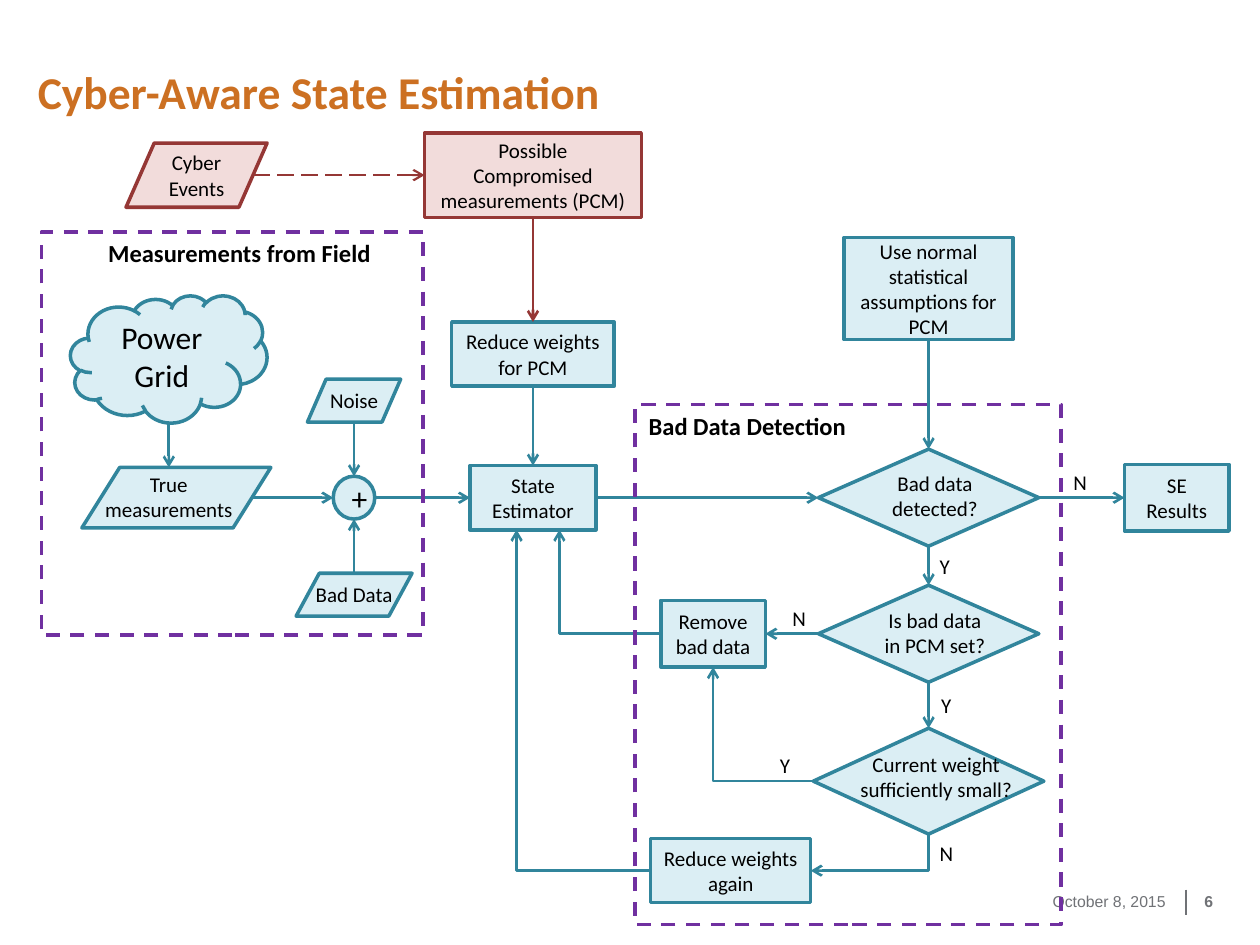
"""Build the Cyber-Aware State Estimation flowchart slide."""
import pptx
import pptx.util
import pptx.dml.color
import pptx.enum.dml
import pptx.enum.shapes
import pptx.enum.text
import pptx.oxml
import pptx.oxml.ns

SHAPE = pptx.enum.shapes.MSO_SHAPE
CONNECTOR = pptx.enum.shapes.MSO_CONNECTOR
DASH = pptx.enum.dml.MSO_LINE
ALIGN = pptx.enum.text.PP_ALIGN
ANCHOR = pptx.enum.text.MSO_ANCHOR
BOX, DIAMOND, DATA = SHAPE.RECTANGLE, SHAPE.FLOWCHART_DECISION, SHAPE.FLOWCHART_DATA
TOP, LEFT, BOTTOM, RIGHT = range(4)

TEAL, RED = ("DBEEF4", "31859C"), ("F2DCDB", "953735")
PURPLE, ORANGE, GREY, BLACK = "7030A0", "CC7022", "707276", "000000"

COLUMNS = {"cyber": 1.56, "grid": 1.34, "true": 1.4, "sum": 2.81, "estimate": 4.23,
           "remove": 5.66, "again": 5.8, "decide": 7.37, "result": 9.34}
ROWS = {"cyber": 1.39, "normal": 2.29, "reduce": 2.81, "grid": 2.85, "noise": 3.18,
        "main": 3.95, "bad": 4.72, "member": 5.03, "weight": 6.2, "again": 6.91}

# name: kind, text, column, row, width, height, palette
NODES = {
    "estimator": (BOX, "State Estimator", "estimate", "main", 1, 0.51, TEAL),
    "reduce": (BOX, "Reduce weights for PCM", "estimate", "reduce", 1.29, 0.51, TEAL),
    "compromised": (BOX, "Possible Compromised measurements (PCM)",
                    "estimate", "cyber", 1.72, 0.67, RED),
    "events": (DATA, "Cyber Events", "cyber", "cyber", 1.12, 0.51, RED),
    "remove": (BOX, "Remove bad data", "remove", "member", 0.83, 0.53, TEAL),
    "again": (BOX, "Reduce weights again", "again", "again", 1.27, 0.51, TEAL),
    "normal": (BOX, "Use normal statistical assumptions for PCM",
               "decide", "normal", 1.34, 0.81, TEAL),
    "member": (DIAMOND, "Is bad data\nin PCM set?", "decide", "member", 1.75, 0.77, TEAL),
    "weight": (DIAMOND, "Current weight\nsufficiently small?",
               "decide", "weight", 1.83, 0.84, TEAL),
    "sum": (SHAPE.FLOWCHART_CONNECTOR, "+", "sum", "main", 0.33, 0.34, TEAL),
    "grid": (SHAPE.CLOUD, "Power Grid", "grid", "grid", 1.56, 1.01, TEAL),
    "true": (DATA, "True\nmeasurements", "true", "main", 1.5, 0.48, TEAL),
    "detected": (DIAMOND, "Bad data\ndetected?", "decide", "main", 1.75, 0.77, TEAL),
    "bad": (DATA, "Bad Data", "sum", "bad", 0.92, 0.34, TEAL),
    "noise": (DATA, "Noise", "sum", "noise", 0.74, 0.34, TEAL),
    "results": (BOX, "SE Results", "result", "main", 0.83, 0.53, TEAL),
}
# name: caption width, height, shift right, shift down
CAPTIONS = {"member": (1.01, 0.5, 0.05, -0.01), "weight": (1.42, 0.51, 0.06, -0.03),
            "detected": (0.89, 0.51, 0.05, -0.01), "true": (1.22, 0.51, -0.06, 0),
            "bad": (0.82, 0.31, 0, 0), "noise": (0.59, 0.31, 0, 0)}
LARGE = {"sum", "grid"}

FLOWS = [
    ("events", RIGHT, "compromised", LEFT), ("compromised", BOTTOM, "reduce", TOP),
    ("reduce", BOTTOM, "estimator", TOP), ("sum", RIGHT, "estimator", LEFT),
    ("normal", BOTTOM, "detected", TOP), ("detected", BOTTOM, "member", TOP),
    ("member", BOTTOM, "weight", TOP), ("member", LEFT, "remove", RIGHT),
    ("estimator", RIGHT, "detected", LEFT), ("bad", TOP, "sum", BOTTOM),
    ("noise", BOTTOM, "sum", TOP), ("detected", RIGHT, "results", LEFT),
    ("grid", BOTTOM, "true", TOP), ("true", RIGHT, "sum", LEFT),
]
# from, side, to, side, shift of the end along that side, arrowhead
BENDS = [
    ("again", RIGHT, "weight", BOTTOM, 0, "headEnd"),
    ("weight", LEFT, "remove", BOTTOM, 0, "tailEnd"),
    ("remove", LEFT, "estimator", BOTTOM, 0.21, "tailEnd"),
    ("again", LEFT, "estimator", BOTTOM, -0.13, "tailEnd"),
]
FRAMES = [("Measurements from Field", (0.33, 1.84, 3.03, 3.2), (0.76, 1.84, 2.3, 0.34)),
          ("Bad Data Detection", (5.04, 3.21, 3.38, 4.13), (5.05, 3.21, 1.78, 0.34))]
ANSWERS = [("Y", 7.37, 5.45), ("N", 7.36, 6.62), ("Y", 6.09, 5.92),
           ("N", 6.19, 4.76), ("Y", 7.36, 4.34), ("N", 8.42, 3.68)]


def inches(*lengths):
    return [pptx.util.Inches(length) for length in lengths]


def color(value):
    return pptx.dml.color.RGBColor.from_string(value)


def write(owner, text, size=12, font="Calibri", ink=BLACK, bold=False,
          align=ALIGN.LEFT, anchor=ANCHOR.TOP, wrap=True, margins=None):
    frame = owner.text_frame
    frame.text, frame.word_wrap, frame.vertical_anchor = text, wrap, anchor
    if margins:
        (frame.margin_left, frame.margin_top,
         frame.margin_right, frame.margin_bottom) = inches(*margins)
    for paragraph in frame.paragraphs:
        paragraph.alignment = align
        paragraph.font.name, paragraph.font.bold = font, bold
        paragraph.font.size = pptx.util.Pt(size)
        paragraph.font.color.rgb = color(ink)


def outline(item, ink, width, dash=None):
    item.line.color.rgb = color(ink)
    item.line.width = pptx.util.Pt(width)
    if dash:
        item.line.dash_style = dash


def draw_node(slide, name):
    kind, text, column, row, width, height, (fill, ink) = NODES[name]
    x, y = COLUMNS[column], ROWS[row]
    caption = CAPTIONS.get(name)
    parent = slide.shapes.add_group_shape().shapes if caption else slide.shapes
    node = parent.add_shape(kind, *inches(x - width / 2, y - height / 2, width, height))
    node.shadow.inherit = False
    node.fill.solid()
    node.fill.fore_color.rgb = color(fill)
    outline(node, ink, 2)
    if caption:
        wide, high, right, down = caption
        label = parent.add_textbox(
            *inches(x + right - wide / 2, y + down - high / 2, wide, high))
        write(label, text, align=ALIGN.CENTER, wrap=False)
    else:
        write(node, text, 18 if name in LARGE else 12,
              align=ALIGN.CENTER, anchor=ANCHOR.MIDDLE)
    return node


def port(name, side):
    kind, _, column, row, width, height, _ = NODES[name]
    reach = width * (0.4 if kind == DATA else 0.5)
    across = {LEFT: -reach, RIGHT: reach}.get(side, 0)
    down = {TOP: -height / 2, BOTTOM: height / 2}.get(side, 0)
    return COLUMNS[column] + across, ROWS[row] + down


def draw_line(slide, kind, start, end, ink, width, arrow=None, dash=None):
    line = slide.shapes.add_connector(kind, *inches(*start, *end))
    outline(line, ink, width, dash)
    if arrow:
        head = pptx.oxml.parse_xml(
            f'<a:{arrow} {pptx.oxml.ns.nsdecls("a")} type="arrow"/>')
        line.line._get_or_add_ln().append(head)
    line._element.spPr.append(
        pptx.oxml.parse_xml(f'<a:effectLst {pptx.oxml.ns.nsdecls("a")}/>'))
    return line


def join(line, nodes, source, out, target, into, shift=0):
    if NODES[source][0] in (BOX, DIAMOND):
        line.begin_connect(nodes[source], out)
    if NODES[target][0] in (BOX, DIAMOND) and not shift:
        line.end_connect(nodes[target], into)


def main():
    deck = pptx.Presentation()
    deck.slide_width, deck.slide_height = inches(10, 7.5)
    slide = deck.slides.add_slide(deck.slide_layouts[5])
    title = slide.shapes.title
    title.left, title.top, title.width, title.height = inches(0.3, 0.22, 7.25, 0.72)
    write(title, "Cyber-Aware State Estimation", 26, ink=ORANGE, bold=True,
          anchor=ANCHOR.BOTTOM, margins=(0, 0, 0, 0))

    draw_line(slide, CONNECTOR.STRAIGHT, (9.41, 7.06), (9.41, 7.26), GREY, 1)
    date = slide.shapes.add_textbox(*inches(7.5, 6.95, 1.75, 0.4))
    write(date, "October 8, 2015", 9, "Arial", GREY, align=ALIGN.RIGHT,
          anchor=ANCHOR.MIDDLE, margins=(0, 0, 0, 0))
    number = slide.shapes.add_textbox(*inches(9.56, 6.95, 0.33, 0.4))
    write(number, "6", 9, "Arial", GREY, True, anchor=ANCHOR.MIDDLE,
          margins=(0, 0, 0.1, 0))

    nodes = {name: draw_node(slide, name) for name in NODES}
    for source, out, target, into in FLOWS:
        start, end = port(source, out), port(target, into)
        if out in (TOP, BOTTOM):
            end = start[0], end[1]
        threat = source == "events"
        line = draw_line(slide, CONNECTOR.STRAIGHT, start, end, NODES[source][6][1],
                         1.25 if threat else 1.5, "tailEnd",
                         DASH.LONG_DASH if threat else None)
        join(line, nodes, source, out, target, into)
    for source, out, target, into, shift, arrow in BENDS:
        x, y = port(target, into)
        line = draw_line(slide, CONNECTOR.ELBOW, port(source, out), (x + shift, y),
                         TEAL[1], 1.5, arrow)
        line._element.spPr.prstGeom.set("prst", "bentConnector2")
        join(line, nodes, source, out, target, into, shift)

    for heading, area, place in FRAMES:
        frame = slide.shapes.add_shape(BOX, *inches(*area))
        frame.shadow.inherit = False
        frame.fill.background()
        outline(frame, PURPLE, 2, DASH.DASH)
        write(slide.shapes.add_textbox(*inches(*place)), heading, 14, bold=True)
    for answer, x, y in ANSWERS:
        write(slide.shapes.add_textbox(*inches(x, y, 0.31, 0.31)), answer)
    deck.save("out.pptx")


if __name__ == "__main__":
    main()
